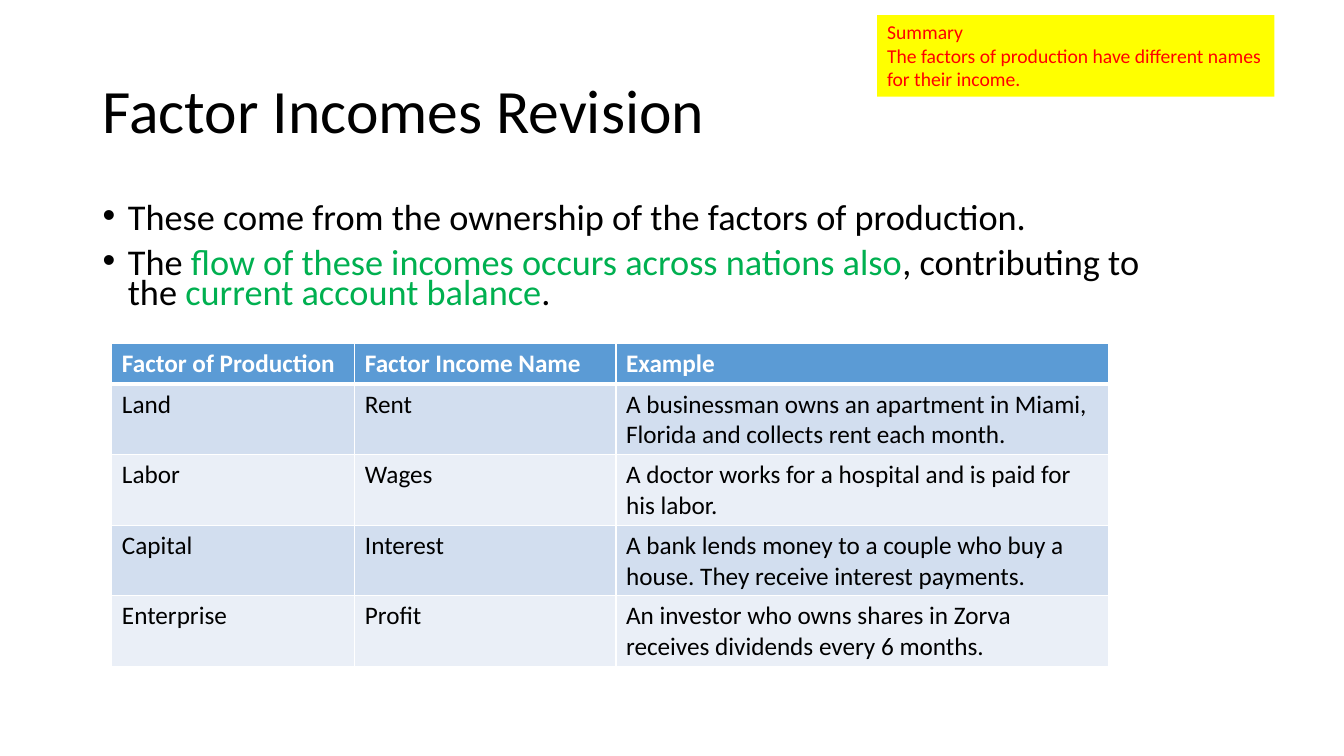
from lxml import etree
from pptx import Presentation
from pptx import util as u
from pptx.dml.color import RGBColor
from pptx.enum import shapes, text
from pptx.oxml.ns import qn

FONT = "Calibri"
COLORS = {
    "ink": "000000", "accent": "00B050", "white": "FFFFFF", "header": "5B9BD5",
    "band_dark": "D2DEEF", "band_light": "EAEFF7", "note": "FFFF00", "note_ink": "FF0000",
}
HEADINGS = ["Factor of Production", "Factor Income Name", "Example"]
FACTORS = [
    ["Land", "Rent", "A businessman owns an apartment in Miami, Florida and collects rent each month."],
    ["Labor", "Wages", "A doctor works for a hospital and is paid for his labor."],
    ["Capital", "Interest", "A bank lends money to a couple who buy a house. They receive interest payments."],
    ["Enterprise", "Profit", "An investor who owns shares in Zorva receives dividends every 6 months."],
]
POINTS = [
    [("These come from the ownership of the factors of production.", "ink")],
    [("The ", "ink"), ("flow of these incomes occurs across nations also", "accent"),
     (", contributing to the ", "ink"), ("current account balance", "accent"), (".", "ink")],
]


def rgb(color):
    return RGBColor.from_string(COLORS[color])


def style(paragraph, size, color, bold=False):
    for run in paragraph.runs:
        run.font.name = FONT
        run.font.size = u.Pt(size)
        run.font.bold = bold
        run.font.color.rgb = rgb(color)


def add_frame(slide, box):
    frame = slide.shapes.add_textbox(*map(u.Inches, box)).text_frame
    frame.word_wrap = True
    return frame


def add_title(slide, box):
    title = add_frame(slide, box)
    title.vertical_anchor = text.MSO_ANCHOR.MIDDLE
    title.text = "Factor Incomes Revision"
    title.paragraphs[0].line_spacing = 0.9
    style(title.paragraphs[0], 44, "ink")


def add_points(slide, box):
    points = add_frame(slide, box)
    for index, pieces in enumerate(POINTS):
        point = points.add_paragraph() if index else points.paragraphs[0]
        point.line_spacing = 0.7
        point.space_before = u.Pt(10)
        for words, color in pieces:
            run = point.add_run()
            run.text = words
            run.font.name = FONT
            run.font.size = u.Pt(25.9)
            run.font.color.rgb = rgb(color)
        properties = point._p.get_or_add_pPr()
        properties.set("marL", str(u.Inches(0.25)))
        properties.set("indent", str(-u.Inches(0.25)))
        etree.SubElement(properties, qn("a:buFont")).set("typeface", "Arial")
        etree.SubElement(properties, qn("a:buChar")).set("char", "•")


def add_borders(cell, bottom):
    properties = cell._tc.get_or_add_tcPr()
    for index, (side, width) in enumerate([("L", 1), ("R", 1), ("T", 1), ("B", bottom)]):
        line = etree.Element(qn(f"a:ln{side}"), w=str(u.Pt(width)))
        fill = etree.SubElement(line, qn("a:solidFill"))
        etree.SubElement(fill, qn("a:srgbClr")).set("val", COLORS["white"])
        properties.insert(index, line)


def add_factor_table(slide, box):
    rows = [HEADINGS] + FACTORS
    table = slide.shapes.add_table(len(rows), len(HEADINGS), *map(u.Inches, box)).table
    for column, width in zip(table.columns, [2.41, 2.59, 4.89]):
        column.width = u.Inches(width)
    for r, values in enumerate(rows):
        is_header = r == 0
        table.rows[r].height = u.Inches(0.4 if is_header else 0.7)
        band = "header" if is_header else ("band_dark" if r % 2 else "band_light")
        for c, value in enumerate(values):
            cell = table.cell(r, c)
            cell.text = value
            style(cell.text_frame.paragraphs[0], 18, "white" if is_header else "ink", is_header)
            cell.fill.solid()
            cell.fill.fore_color.rgb = rgb(band)
            add_borders(cell, 3 if r == 0 else 1)
            if r == 1:
                cell._tc.tcPr.find(qn("a:lnT")).set("w", str(u.Pt(3)))


def add_summary(slide, box):
    summary = slide.shapes.add_shape(shapes.MSO_SHAPE.RECTANGLE, *map(u.Inches, box))
    summary.shadow.inherit = False
    summary.fill.solid()
    summary.fill.fore_color.rgb = rgb("note")
    summary.line.fill.background()
    frame = summary.text_frame
    frame.word_wrap = True
    frame.vertical_anchor = text.MSO_ANCHOR.TOP
    frame.text = "Summary\nThe factors of production have different names for their income."
    for paragraph in frame.paragraphs:
        paragraph.alignment = text.PP_ALIGN.LEFT
        style(paragraph, 14, "note_ink")


def main():
    deck = Presentation()
    deck.slide_width, deck.slide_height = u.Inches(13.33), u.Inches(7.5)
    slide = deck.slides.add_slide(deck.slide_layouts[6])
    add_title(slide, (0.92, 0.4, 11.5, 1.45))
    add_points(slide, (0.92, 2, 10.9, 1.26))
    add_factor_table(slide, (1.11, 3.41, 9.89, 3.2))
    add_summary(slide, (8.7, 0.15, 3.94, 0.81))
    deck.save("out.pptx")


if __name__ == "__main__":
    main()
